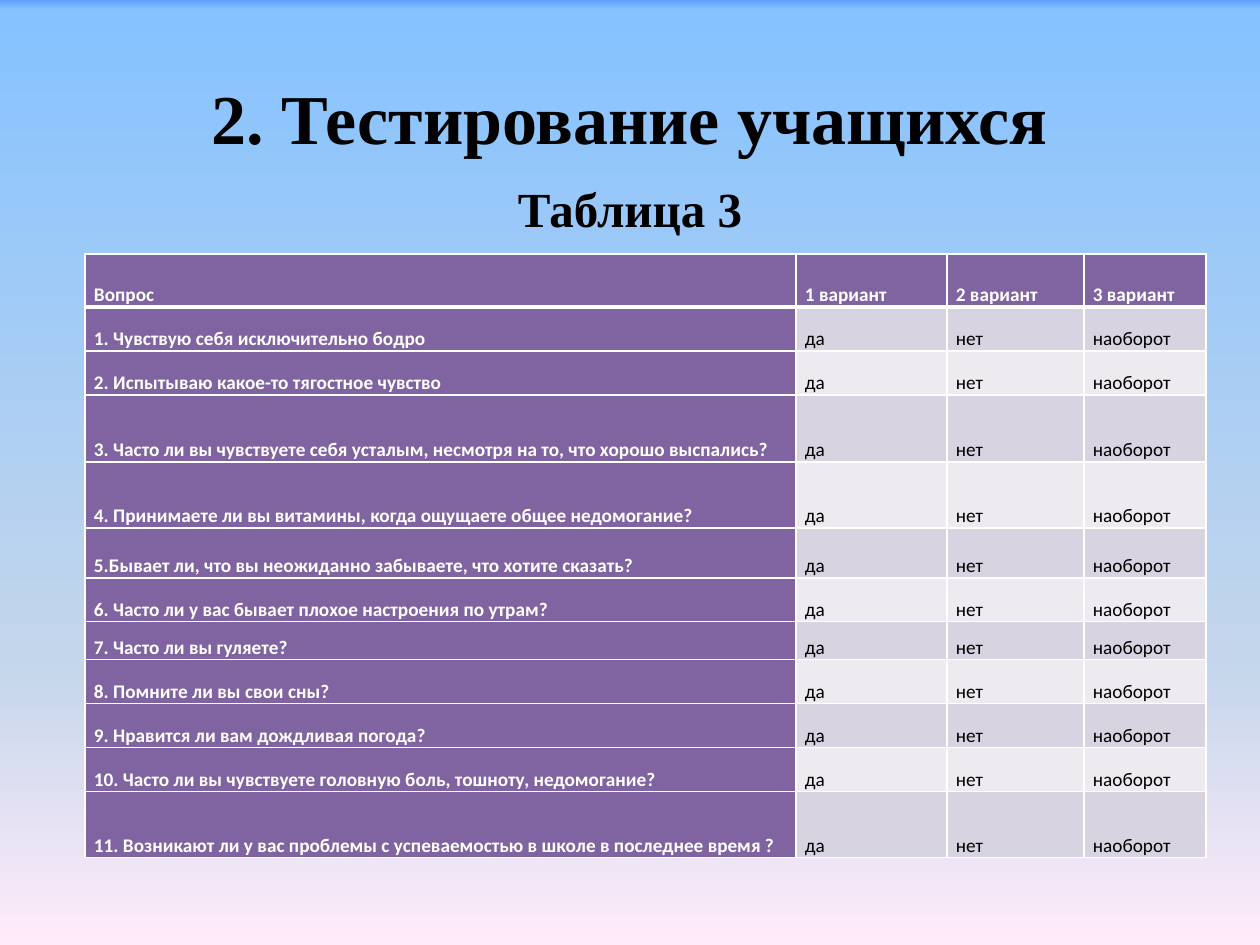
from copy import deepcopy

from lxml.etree import SubElement
from pptx import Presentation
from pptx.dml.color import RGBColor
from pptx.enum.text import MSO_ANCHOR as Anchor, PP_ALIGN as Align
from pptx.oxml.ns import qn
from pptx.util import Pt

EMU_PER_PX = 914400 / 126
COLORS = {
    "text": "000000", "white": "FFFFFF", "header": "8064A2",
    "odd_row": "D8D3E0", "even_row": "EDEAF0",
}
BACKGROUND_STOPS = [(0, "5E9EFF"), (1, "85C2FF"), (70, "C4D6EB"), (100, "FFEBFA")]

COLUMN_WIDTHS = [711, 151, 137, 122]
HEADINGS = ["Вопрос", "1 вариант", "2 вариант", "3 вариант"]
HEADING_HEIGHT = 53
ANSWERS = ["да", "нет", "наоборот"]
QUESTIONS = [
    ("1. Чувствую себя исключительно бодро", 44),
    ("2. Испытываю какое-то тягостное чувство", 44),
    ("3. Часто ли вы чувствуете себя усталым, несмотря на то, что хорошо выспались?", 67),
    ("4. Принимаете ли вы витамины, когда ощущаете общее недомогание?", 66),
    ("5.Бывает ли, что вы неожиданно забываете, что хотите сказать?", 50),
    ("6. Часто ли у вас бывает плохое настроения по утрам?", 44),
    ("7. Часто ли вы гуляете?", 38),
    ("8. Помните ли вы свои сны?", 44),
    ("9. Нравится ли вам дождливая погода?", 44),
    ("10. Часто ли вы чувствуете головную боль, тошноту, недомогание?", 44),
    ("11. Возникают ли у вас проблемы с успеваемостью в школе в последнее время ?", 66),
]


def px(length):
    return round(length * EMU_PER_PX)


def write_text(frame, text, *, size, font="Calibri", color="text", bold=False,
               align=Align.LEFT, line_spacing=1.0):
    paragraph = frame.paragraphs[0]
    paragraph.alignment = align
    paragraph.line_spacing = line_spacing
    run = paragraph.add_run()
    run.text = text
    run.font.size = Pt(size)
    run.font.name = font
    run.font.bold = bold
    run.font.color.rgb = RGBColor.from_string(COLORS[color])


def paint_background(slide):
    fill = slide.background.fill
    fill.gradient()
    fill.gradient_angle = 270
    stop_list = fill.gradient_stops[0]._gs.getparent()
    for _ in range(len(BACKGROUND_STOPS) - len(stop_list)):
        stop_list.append(deepcopy(stop_list[0]))
    for stop, (percent, color) in zip(fill.gradient_stops, BACKGROUND_STOPS):
        stop.position = percent / 100
        stop.color.rgb = RGBColor.from_string(color)


def add_heading(slide, box, text, size, anchor):
    frame = slide.shapes.add_textbox(*map(px, box)).text_frame
    frame.word_wrap = True
    frame.vertical_anchor = anchor
    write_text(frame, text, size=size, font="Times New Roman", bold=True, align=Align.CENTER)


def set_borders(cell, **widths):
    properties = cell._tc.get_or_add_tcPr()
    for side in ("L", "R", "T", "B"):
        line = SubElement(properties, qn(f"a:ln{side}"), w=str(Pt(widths.get(side, 1))))
        fill = SubElement(line, qn("a:solidFill"))
        SubElement(fill, qn("a:srgbClr"), val=COLORS["white"])


def format_cell(cell, text, row, column):
    is_heading = row == 0 or column == 0
    cell.margin_left = cell.margin_right = px(9)
    cell.margin_top = cell.margin_bottom = 0
    cell.vertical_anchor = Anchor.BOTTOM
    write_text(cell.text_frame, text, size=11, bold=is_heading, line_spacing=1.07,
               color="white" if is_heading else "text")
    set_borders(cell, T=3 if row == 1 else 1, B=3 if row == 0 else 1)
    fill_name = "header" if is_heading else "odd_row" if row % 2 else "even_row"
    cell.fill.solid()
    cell.fill.fore_color.rgb = RGBColor.from_string(COLORS[fill_name])


def add_questionnaire(slide, left, top):
    rows = [HEADINGS] + [[question, *ANSWERS] for question, _ in QUESTIONS]
    heights = [HEADING_HEIGHT] + [height for _, height in QUESTIONS]
    box = (left, top, sum(COLUMN_WIDTHS), sum(heights))
    table = slide.shapes.add_table(len(rows), len(HEADINGS), *map(px, box)).table
    table.first_col = True
    for column, width in zip(table.columns, COLUMN_WIDTHS):
        column.width = px(width)
    for row, height in zip(table.rows, heights):
        row.height = px(height)
    for row, texts in enumerate(rows):
        for column, text in enumerate(texts):
            format_cell(table.cell(row, column), text, row, column)


def main():
    presentation = Presentation()
    presentation.slide_width, presentation.slide_height = px(1260), px(945)
    slide = presentation.slides.add_slide(presentation.slide_layouts[6])
    paint_background(slide)
    add_heading(slide, (63, 38, 1134, 158), "2. Тестирование учащихся", 40, Anchor.MIDDLE)
    add_questionnaire(slide, 85, 254)
    add_heading(slide, (0, 172, 1260, 110), "Таблица 3", 28, Anchor.TOP)
    presentation.save("out.pptx")


if __name__ == "__main__":
    main()
